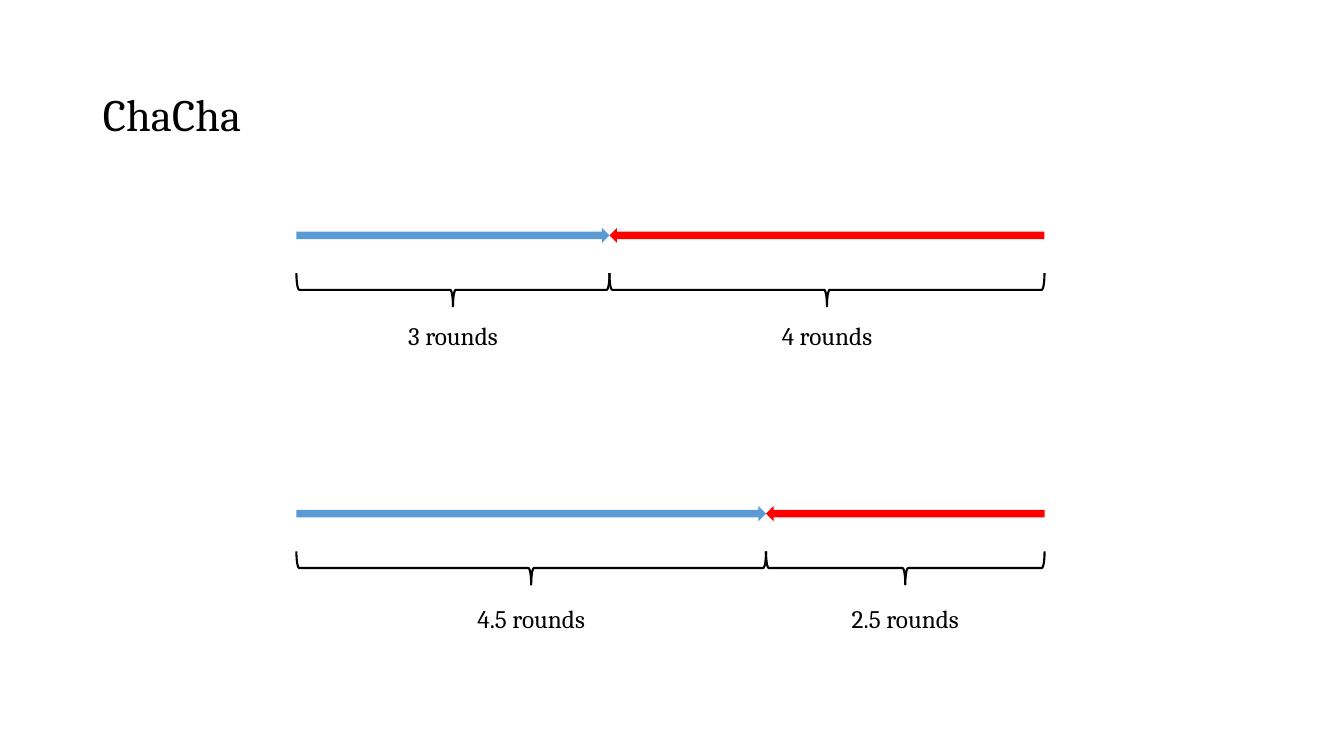
from pptx import Presentation
from pptx.dml.color import RGBColor
from pptx.enum.shapes import MSO_SHAPE
from pptx.enum.text import MSO_ANCHOR, MSO_AUTO_SIZE, PP_ALIGN
from pptx.util import Inches, Pt

RIGHT_ARROW, LEFT_ARROW = MSO_SHAPE.RIGHT_ARROW, MSO_SHAPE.LEFT_ARROW
LEFT_BRACE = MSO_SHAPE.LEFT_BRACE
MIDDLE = MSO_ANCHOR.MIDDLE
NO_FIT, GROW = MSO_AUTO_SIZE.NONE, MSO_AUTO_SIZE.SHAPE_TO_FIT_TEXT
LEFT, CENTER = PP_ALIGN.LEFT, PP_ALIGN.CENTER

COLORS = {"text": "000000", "forward": "5B9BD5", "backward": "FF0000"}
FONT = "Cambria"

# Shared horizontal grid, in inches
START, END, ROUND = 2.94, 10.36, 1.035
ARROW_H, BRACE_H, LABEL_H = 0.15, 0.33, 0.4
BRACE_DROP = 0.45

# top of the arrows, top of the labels, label width, forward and backward rounds
ROWS = [
    (2.26, 3.13, 1.22, 3, 4),
    (5.02, 5.94, 1.55, 4.5, 2.5),
]


class RoundsSlide:
    def __init__(self, prs):
        self.s = prs.slides.add_slide(prs.slide_layouts[5])

    def add_text(self, tf, text, size, align):
        p = tf.paragraphs[0]
        p.alignment = align
        r = p.add_run()
        r.text = text
        r.font.name = FONT
        r.font.size = Pt(size)
        r.font.color.rgb = RGBColor.from_string(COLORS["text"])
        return p

    def title(self, text):
        sp = self.s.shapes.title
        sp.left, sp.top = Inches(0.92), Inches(0.57)
        sp.width, sp.height = Inches(11.5), Inches(1.18)
        tf = sp.text_frame
        tf.auto_size = NO_FIT
        tf.vertical_anchor = MIDDLE
        self.add_text(tf, text, 32, LEFT).line_spacing = 0.9

    def shape(self, kind, x, y, w, h):
        sp = self.s.shapes.add_shape(kind, Inches(x), Inches(y), Inches(w), Inches(h))
        sp.shadow.inherit = False
        return sp

    def arrow(self, kind, color, x1, x2, y):
        sp = self.shape(kind, x1, y, x2 - x1, ARROW_H)
        sp.fill.solid()
        sp.fill.fore_color.rgb = RGBColor.from_string(COLORS[color])
        sp.line.fill.background()

    def brace(self, x1, x2, y):
        """Lay a left brace on its side, pointing down, from x1 to x2."""
        span = x2 - x1
        sp = self.shape(LEFT_BRACE, (x1 + x2 - BRACE_H) / 2,
                        y + (BRACE_H - span) / 2, BRACE_H, span)
        sp.rotation = 270
        sp.fill.background()
        sp.line.color.rgb = RGBColor.from_string(COLORS["text"])
        sp.line.width = Pt(1.5)

    def label(self, text, center, y, w):
        sp = self.s.shapes.add_textbox(Inches(center - w / 2), Inches(y),
                                       Inches(w), Inches(LABEL_H))
        tf = sp.text_frame
        tf.word_wrap = True
        tf.auto_size = GROW
        self.add_text(tf, text, 18, CENTER)


def main():
    prs = Presentation()
    prs.slide_width, prs.slide_height = Inches(13.33), Inches(7.5)
    slide = RoundsSlide(prs)
    slide.title("ChaCha")
    for arrow_y, label_y, label_w, forward, backward in ROWS:
        meet = START + forward * ROUND
        parts = [
            (LEFT_ARROW, "backward", meet, END, backward),
            (RIGHT_ARROW, "forward", START, meet, forward),
        ]
        for kind, color, x1, x2, rounds in parts:
            slide.arrow(kind, color, x1, x2, arrow_y)
            slide.brace(x1, x2, arrow_y + BRACE_DROP)
            slide.label(f"{rounds} rounds", (x1 + x2) / 2, label_y, label_w)
    prs.save("out.pptx")


if __name__ == "__main__":
    main()
